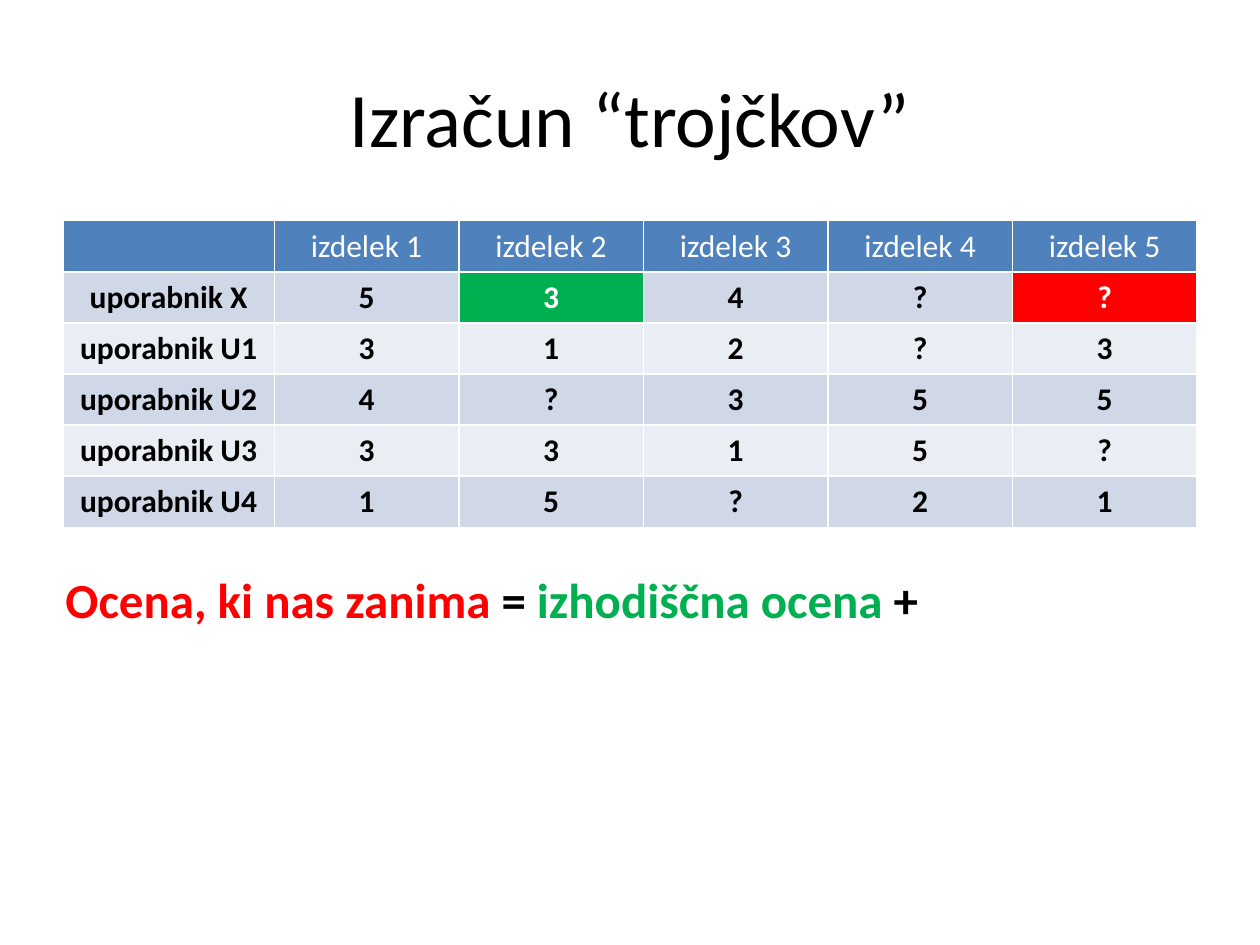
from dataclasses import dataclass

import pptx
import pptx.dml.color
import pptx.enum.text
import pptx.util

Cm = pptx.util.Cm
RGBColor = pptx.dml.color.RGBColor
Align = pptx.enum.text.PP_ALIGN
Anchor = pptx.enum.text.MSO_ANCHOR

BLACK = RGBColor(0x00, 0x00, 0x00)
WHITE = RGBColor(0xFF, 0xFF, 0xFF)
RED = RGBColor(0xFF, 0x00, 0x00)
GREEN = RGBColor(0x00, 0xB0, 0x50)
HEADER_BLUE = RGBColor(0x4F, 0x81, 0xBD)
BANDS = (RGBColor(0xD0, 0xD8, 0xE8), RGBColor(0xE9, 0xED, 0xF4))

FONT = "Calibri"
USER_WIDTH, ITEM_WIDTH, ROW_HEIGHT = 4.26, 3.72, 1.03
ITEM_COUNT = 5


@dataclass(frozen=True)
class UserRatings:
    name: str
    ratings: str


@dataclass(frozen=True)
class Phrase:
    text: str
    color: RGBColor


USERS = (
    UserRatings("uporabnik X", "534??"),
    UserRatings("uporabnik U1", "312?3"),
    UserRatings("uporabnik U2", "4?355"),
    UserRatings("uporabnik U3", "3315?"),
    UserRatings("uporabnik U4", "15?21"),
)
HIGHLIGHTS = {(1, 2): GREEN, (1, 5): RED}
FORMULA = (
    Phrase("Ocena, ki nas zanima", RED),
    Phrase(" = ", BLACK),
    Phrase("izhodiščna ocena", GREEN),
    Phrase(" +", BLACK),
)


def add_span(para, text: str, *, size: float, color: RGBColor, bold: bool = False) -> None:
    span = para.add_run()
    span.text = text
    span.font.name = FONT
    span.font.size = pptx.util.Pt(size)
    span.font.bold = bold
    span.font.color.rgb = color


def add_text(page, phrases: tuple[Phrase, ...], *, left: float, top: float, width: float,
             height: float, size: float, bold: bool = False,
             align=Align.LEFT, anchor=Anchor.TOP) -> None:
    box = page.shapes.add_textbox(Cm(left), Cm(top), Cm(width), Cm(height))
    frame = box.text_frame
    frame.word_wrap = True
    frame.vertical_anchor = anchor
    para = frame.paragraphs[0]
    para.alignment = align
    for phrase in phrases:
        add_span(para, phrase.text, size=size, color=phrase.color, bold=bold)


def fill_cell(cell, text: str, *, fill: RGBColor, color: RGBColor, bold: bool) -> None:
    cell.fill.solid()
    cell.fill.fore_color.rgb = fill
    para = cell.text_frame.paragraphs[0]
    para.alignment = Align.CENTER
    if text:
        add_span(para, text, size=18, color=color, bold=bold)


def add_ratings_table(page, users: tuple[UserRatings, ...], *, left: float, top: float) -> None:
    row_count = len(users) + 1
    table = page.shapes.add_table(
        row_count, ITEM_COUNT + 1, Cm(left), Cm(top),
        Cm(USER_WIDTH + ITEM_COUNT * ITEM_WIDTH), Cm(row_count * ROW_HEIGHT),
    ).table
    for index, column in enumerate(table.columns):
        column.width = Cm(ITEM_WIDTH if index else USER_WIDTH)
    for row in table.rows:
        row.height = Cm(ROW_HEIGHT)

    headings = ["", *(f"izdelek {number}" for number in range(1, ITEM_COUNT + 1))]
    for column, heading in enumerate(headings):
        fill_cell(table.cell(0, column), heading, fill=HEADER_BLUE, color=WHITE, bold=False)
    for row, user in enumerate(users, start=1):
        for column, text in enumerate((user.name, *user.ratings)):
            highlight = HIGHLIGHTS.get((row, column))
            fill_cell(
                table.cell(row, column), text, bold=True,
                fill=highlight or BANDS[(row - 1) % 2],
                color=WHITE if highlight else BLACK,
            )


def main() -> None:
    deck = pptx.Presentation()
    deck.slide_width, deck.slide_height = Cm(25.4), Cm(19.05)
    page = deck.slides.add_slide(deck.slide_layouts[6])
    add_text(page, (Phrase("Izračun “trojčkov”", BLACK),), left=1.27, top=0.76,
             width=22.86, height=3.18, size=44, align=Align.CENTER, anchor=Anchor.MIDDLE)
    add_ratings_table(page, USERS, left=1.27, top=4.45)
    add_text(page, FORMULA, left=1.07, top=11.35, width=22.86, height=2.64,
             size=28, bold=True)
    deck.save("out.pptx")


if __name__ == "__main__":
    main()
